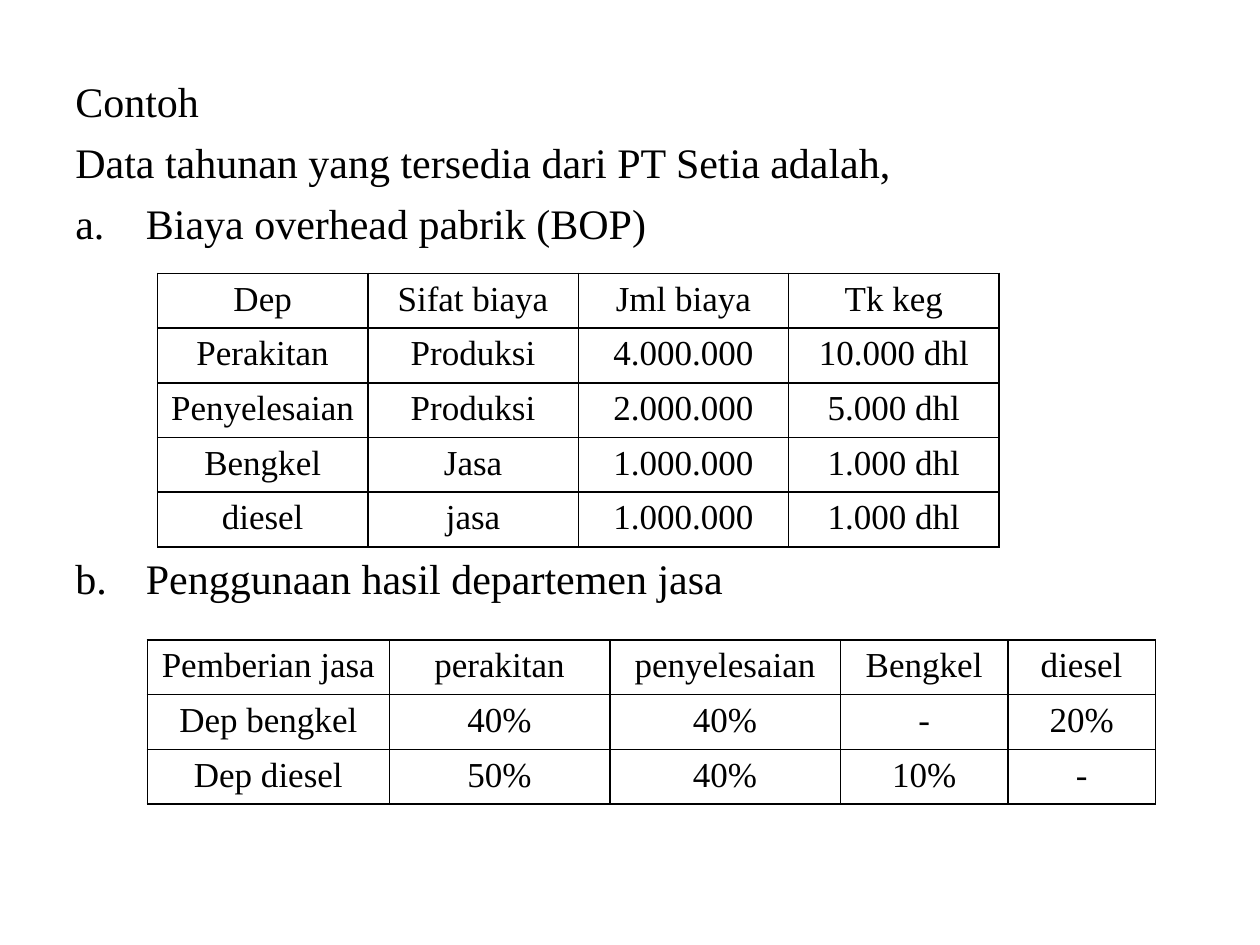
from dataclasses import dataclass

from lxml.etree import SubElement
from pptx import Presentation
from pptx.dml.color import RGBColor
from pptx.enum.text import PP_ALIGN as Align
from pptx.oxml.ns import qn
from pptx.util import Inches, Pt

FONT = "Times New Roman"
BLACK = "000000"
ROW_HEIGHT = 0.41


@dataclass
class Line:
    text: str
    space_before: float = 6
    lettered: bool = False


@dataclass
class Grid:
    left: float
    top: float
    widths: list[float]
    rows: list[list[str]]


LINES = [
    Line("Contoh", space_before=0),
    Line("Data tahunan yang tersedia dari PT Setia adalah,"),
    Line("Biaya overhead pabrik (BOP)", lettered=True),
    # The wide gap leaves room for the cost table
    Line("Penggunaan hasil departemen jasa", space_before=174, lettered=True),
]

OVERHEAD_COSTS = Grid(1.25, 2.17, [1.67] * 4, [
    ["Dep", "Sifat biaya", "Jml biaya", "Tk keg"],
    ["Perakitan", "Produksi", "4.000.000", "10.000 dhl"],
    ["Penyelesaian", "Produksi", "2.000.000", "5.000 dhl"],
    ["Bengkel", "Jasa", "1.000.000", "1.000 dhl"],
    ["diesel", "jasa", "1.000.000", "1.000 dhl"],
])

SERVICE_USE = Grid(1.17, 5.08, [1.92, 1.75, 1.83, 1.33, 1.17], [
    ["Pemberian jasa", "perakitan", "penyelesaian", "Bengkel", "diesel"],
    ["Dep bengkel", "40%", "40%", "-", "20%"],
    ["Dep diesel", "50%", "40%", "10%", "-"],
])


def set_font(paragraph, size: float, color: str = BLACK) -> None:
    font = paragraph.font
    font.name = FONT
    font.size = Pt(size)
    font.color.rgb = RGBColor.from_string(color)


def set_indent(paragraph, hanging: float, lettered: bool) -> None:
    """Hang the first line, with an a., b. numeral if lettered."""
    properties = paragraph._p.get_or_add_pPr()
    properties.set("marL", str(Inches(hanging)))
    properties.set("indent", str(-Inches(hanging)))
    if lettered:
        SubElement(properties, qn("a:buAutoNum"), type="alphaLcPeriod")


def add_outline(slide, lines: list[Line]) -> None:
    box = slide.shapes.add_textbox(Inches(0.5), Inches(0.55), Inches(9), Inches(6.15))
    frame = box.text_frame
    frame.word_wrap = True
    for index, line in enumerate(lines):
        paragraph = frame.add_paragraph() if index else frame.paragraphs[0]
        paragraph.text = line.text
        set_indent(paragraph, 0.56 if line.lettered else 0.38, line.lettered)
        paragraph.space_before = Pt(line.space_before)
        set_font(paragraph, 24)


def set_borders(cell, color: str = BLACK, width: float = 1) -> None:
    properties = cell._tc.get_or_add_tcPr()
    for index, side in enumerate(("lnL", "lnR", "lnT", "lnB")):
        border = properties.makeelement(qn(f"a:{side}"), {"w": str(Pt(width))})
        fill = SubElement(border, qn("a:solidFill"))
        SubElement(fill, qn("a:srgbClr"), val=color)
        properties.insert(index, border)


def add_grid(slide, grid: Grid) -> None:
    frame = slide.shapes.add_table(
        len(grid.rows), len(grid.widths), Inches(grid.left), Inches(grid.top),
        Inches(sum(grid.widths)), Inches(ROW_HEIGHT * len(grid.rows)))
    table = frame.table
    table.first_row = table.horz_banding = False
    for column, width in zip(table.columns, grid.widths):
        column.width = Inches(width)
    for row, texts in zip(table.rows, grid.rows):
        row.height = Inches(ROW_HEIGHT)
        for cell, text in zip(row.cells, texts):
            cell.text = text
            cell.fill.background()
            set_borders(cell)
            paragraph = cell.text_frame.paragraphs[0]
            paragraph.alignment = Align.CENTER
            set_font(paragraph, 20)


def main() -> None:
    deck = Presentation()
    deck.slide_width, deck.slide_height = Inches(10), Inches(7.5)
    slide = deck.slides.add_slide(deck.slide_layouts[6])
    add_outline(slide, LINES)
    for grid in (OVERHEAD_COSTS, SERVICE_USE):
        add_grid(slide, grid)
    deck.save("out.pptx")


if __name__ == "__main__":
    main()
